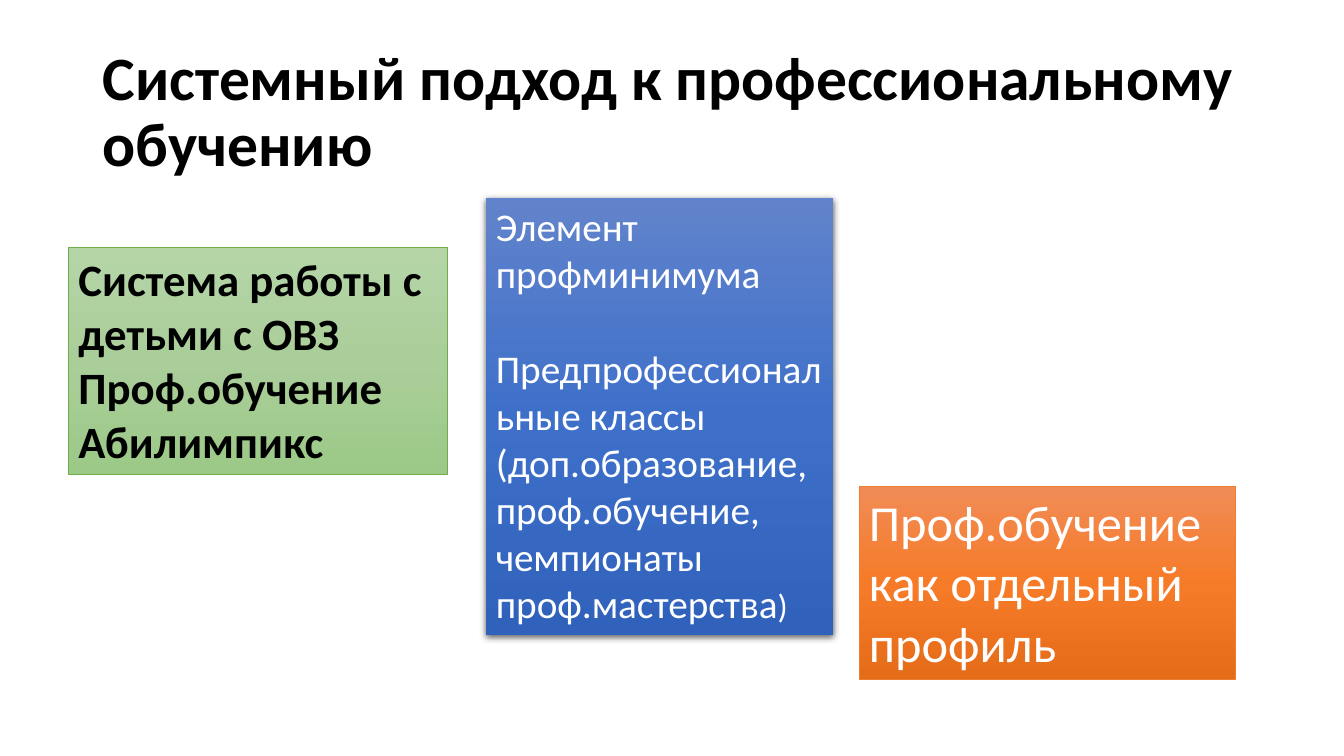
from copy import deepcopy
from dataclasses import dataclass

from lxml import etree
from pptx import Presentation
from pptx.dml.color import RGBColor
from pptx.enum.shapes import MSO_SHAPE as Shape
from pptx.enum.text import MSO_ANCHOR as Anchor, MSO_AUTO_SIZE as AutoSize, PP_ALIGN as Align
from pptx.oxml.ns import qn
from pptx.util import Inches, Pt


@dataclass(frozen=True)
class Theme:
    font: str = "Calibri"
    dark: str = "000000"
    light: str = "FFFFFF"
    green: tuple[str, ...] = ("B5D5A7", "AACE9A", "9CC987")
    blue: tuple[str, ...] = ("6183CB", "3E70CA", "3062BB")
    orange: tuple[str, ...] = ("F18C57", "F67B28", "E56C19")
    green_line: str = "70AD47"
    orange_line: str = "ED7D31"
    title_size: int = 44
    green_size: int = 32
    blue_size: int = 28
    bracket_size: int = 24
    orange_size: int = 36


@dataclass(frozen=True)
class Card:
    bounds: tuple[float, float, float, float]
    gradient: tuple[str, ...]
    paragraphs: tuple[tuple[tuple[str, int], ...], ...]
    color: str
    bold: bool = False
    line: str | None = None
    paragraph_gap: int = 0


THEME = Theme()
TITLE = "Системный подход к профессиональному обучению"
CARDS = (
    Card((0.68, 2.45, 3.76, 2.26), THEME.green,
         tuple(((text, THEME.green_size),) for text in
               ("Система работы с детьми с ОВЗ", "Проф.обучение", "Абилимпикс")),
         THEME.dark, bold=True, line=THEME.green_line),
    Card((4.82, 1.96, 3.44, 4.34), THEME.blue,
         ((("Элемент профминимума", THEME.blue_size),),
          (("Предпрофессиональные классы (доп.образование, проф.обучение, "
            "чемпионаты проф.мастерства", THEME.blue_size),
           (")", THEME.bracket_size))),
         THEME.light, paragraph_gap=34),
    Card((8.52, 4.82, 3.73, 1.92), THEME.orange,
         ((("Проф.обучение как отдельный профиль", THEME.orange_size),),),
         THEME.light, line=THEME.orange_line),
)


def set_format(target, values: dict) -> None:
    for name, value in values.items():
        setattr(target, name, value)


def add_span(para, text: str, size: int, color: str, bold: bool) -> None:
    span = para.add_run()
    span.text = text
    set_format(span.font, {"name": THEME.font, "size": Pt(size), "bold": bold})
    span.font.color.rgb = RGBColor.from_string(color)


def place(box, bounds: tuple[float, float, float, float]) -> None:
    names = ("left", "top", "width", "height")
    set_format(box, dict(zip(names, map(Inches, bounds))))


def fill_gradient(box, colors: tuple[str, ...]) -> None:
    box.fill.gradient()
    box.fill.gradient_angle = 270
    stop_list = box._element.spPr.find(".//" + qn("a:gsLst"))
    stop_list.insert(1, deepcopy(stop_list[0]))
    for index, (stop, color) in enumerate(zip(box.fill.gradient_stops, colors)):
        stop.position = index / (len(colors) - 1)
        stop.color.rgb = RGBColor.from_string(color)


def add_shadow(box) -> None:
    effects = box._element.spPr.find(qn("a:effectLst"))
    shadow = etree.SubElement(effects, qn("a:outerShdw"), blurRad=str(Pt(4.5)),
                              dist=str(Pt(1.5)), dir="5400000", algn="ctr", rotWithShape="0")
    color = etree.SubElement(shadow, qn("a:srgbClr"), val=THEME.dark)
    etree.SubElement(color, qn("a:alpha"), val="63000")


def add_title(page) -> None:
    box = page.shapes.title
    place(box, (0.92, 0.4, 11.5, 1.45))
    set_format(box.text_frame, {"word_wrap": True, "auto_size": AutoSize.NONE,
                                "vertical_anchor": Anchor.MIDDLE})
    para = box.text_frame.paragraphs[0]
    set_format(para, {"alignment": Align.LEFT, "line_spacing": 0.9})
    add_span(para, TITLE, THEME.title_size, THEME.dark, True)


def add_card(page, card: Card) -> None:
    box = page.shapes.add_shape(Shape.RECTANGLE, *map(Inches, card.bounds))
    fill_gradient(box, card.gradient)
    box.shadow.inherit = False

    # A card has either an outline or a shadow
    if card.line:
        box.line.color.rgb = RGBColor.from_string(card.line)
        box.line.width = Pt(0.5)
    else:
        box.line.fill.background()
        add_shadow(box)

    frame = box.text_frame
    set_format(frame, {"word_wrap": True, "auto_size": AutoSize.SHAPE_TO_FIT_TEXT,
                       "vertical_anchor": Anchor.TOP})
    for index, spans in enumerate(card.paragraphs):
        para = frame.add_paragraph() if index else frame.paragraphs[0]
        para.alignment = Align.LEFT
        if index and card.paragraph_gap:
            para.space_before = Pt(card.paragraph_gap)
        for text, size in spans:
            add_span(para, text, size, card.color, card.bold)


def main() -> None:
    deck = Presentation()
    set_format(deck, {"slide_width": Inches(13.33), "slide_height": Inches(7.5)})
    page = deck.slides.add_slide(deck.slide_layouts.get_by_name("Title Only"))
    add_title(page)
    for card in CARDS:
        add_card(page, card)
    deck.save("out.pptx")


if __name__ == "__main__":
    main()
